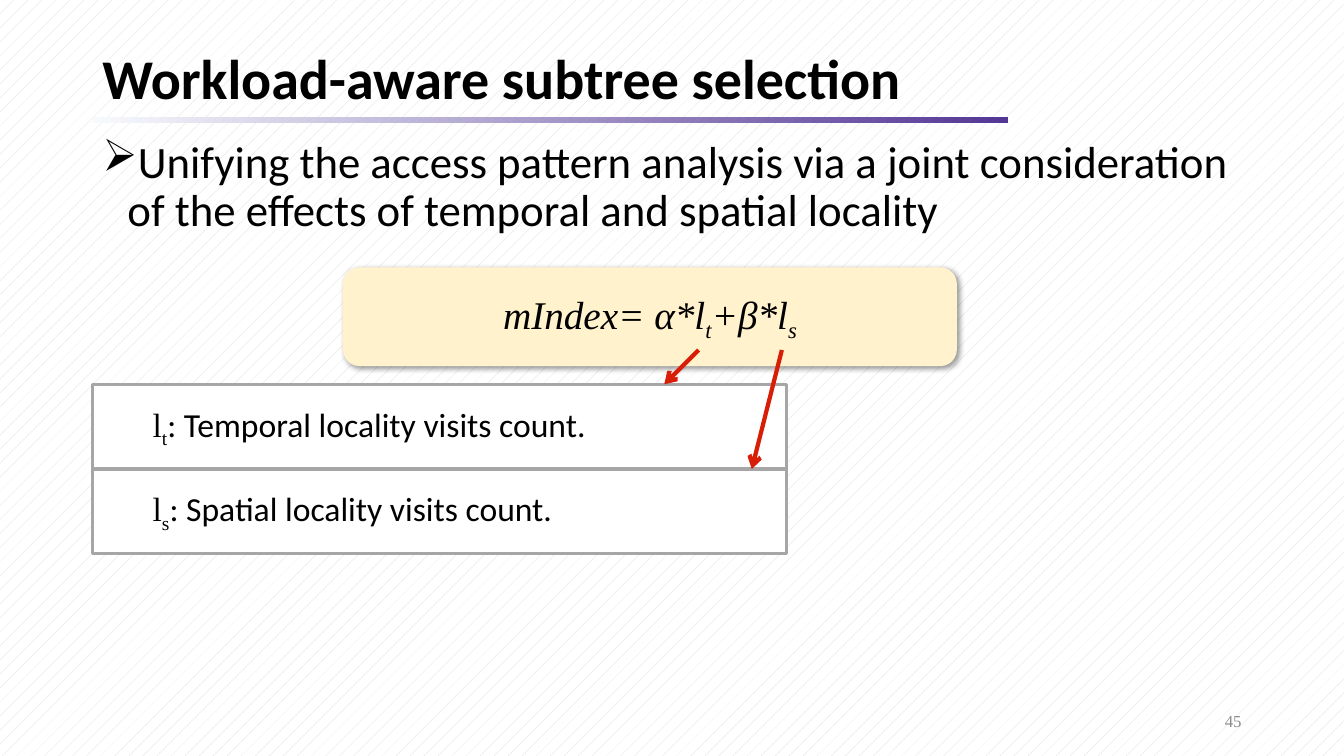
from lxml.etree import SubElement as Sub
from pptx import Presentation
from pptx.dml.color import RGBColor
from pptx.enum.dml import MSO_PATTERN as Pat
from pptx.enum.shapes import MSO_CONNECTOR as Conn, MSO_SHAPE as Geo
from pptx.enum.text import MSO_ANCHOR as Anc, PP_ALIGN as Al
from pptx.oxml.ns import qn
from pptx.util import Pt

SANS, SERIF = "Calibri", "Times New Roman"


def tint(code):
    """Return the colour for a hex string."""
    return RGBColor.from_string(code)


def apply(obj, vals):
    """Set each value of a dict on an object."""
    for key, val in vals.items():
        setattr(obj, key, val)


def write(shape, runs, font, para=None, anchor=Anc.MIDDLE, color="000000", bullet=None):
    """Fill a shape with one paragraph of (text, changes, baseline) runs."""
    apply(shape.text_frame, {"word_wrap": True, "vertical_anchor": anchor})
    line = shape.text_frame.paragraphs[0]
    props = line._p.get_or_add_pPr()
    if bullet:
        Sub(props, qn("a:buChar"), char=bullet)
    apply(line, {"alignment": Al.LEFT, **(para or {})})
    for text, changes, base in runs:
        run = line.add_run()
        run.text = text
        apply(run.font, {**font, **changes})
        run.font.color.rgb = tint(color)
        if base:
            run._r.get_or_add_rPr().set("baseline", str(base * 1000))
    return props


def label(slide, area, runs, font, **opts):
    """Add a text box and return its paragraph properties."""
    return write(slide.shapes.add_textbox(*map(Pt, area)), runs, font, **opts)


def block(slide, geo, area, fill, edge=None):
    """Add a flat shape with an optional outline."""
    shape = slide.shapes.add_shape(geo, *map(Pt, area))
    shape.shadow.inherit = False
    shape.fill.solid()
    shape.fill.fore_color.rgb = tint(fill)
    if edge:
        shape.line.color.rgb = tint(edge)
        shape.line.width = Pt(2.25)
    else:
        shape.line.fill.background()
    return shape


def fade(shape, codes):
    """Give a shape a left-to-right gradient."""
    shape.fill.gradient()
    shape.fill.gradient_angle = 0
    for stop, code, pos in zip(shape.fill.gradient_stops, codes, (0, 1)):
        stop.color.rgb = tint(code)
        stop.position = pos


def shade(shape):
    """Add a soft shadow to the lower right."""
    effects = shape._element.spPr.find(qn("a:effectLst"))
    outer = Sub(effects, qn("a:outerShdw"), blurRad=str(Pt(4)), dist=str(Pt(2)),
                dir="2700000", algn="tl", rotWithShape="0")
    color = Sub(outer, qn("a:srgbClr"), val="000000")
    Sub(color, qn("a:alpha"), val="40000")


def arrow(slide, ends):
    """Draw a red arrow between two points."""
    link = slide.shapes.add_connector(Conn.STRAIGHT, *map(Pt, ends))
    link.line.color.rgb = tint("D81E06")
    link.line.width = Pt(3)
    Sub(link.line._get_or_add_ln(), qn("a:tailEnd"), type="arrow")
    Sub(link._element.spPr, qn("a:effectLst"))


def main():
    """Build and save the slide."""
    deck = Presentation()
    apply(deck, {"slide_width": Pt(960), "slide_height": Pt(540)})
    slide = deck.slides.add_slide(deck.slide_layouts[6])
    back = slide.background.fill
    back.patterned()
    back.pattern = Pat.PERCENT_5
    back.fore_color.rgb = tint("D9D9D9")
    back.back_color.rgb = tint("FFFFFF")

    rule = block(slide, Geo.RECTANGLE, (66, 83.5, 654, 4.3), "FFFFFF")
    fade(rule, ("F7FAFD", "543795"))
    label(slide, (678, 500.5, 216, 28.8), [("45", {}, 0)],
          {"name": SERIF, "size": Pt(12)}, para={"alignment": Al.RIGHT}, color="8C8C8C")
    label(slide, (66, 31, 828, 54), [("Workload-aware subtree selection", {}, 0)],
          {"name": SANS, "size": Pt(40), "bold": True}, para={"line_spacing": 0.9})
    claim = ("Unifying the access pattern analysis via a joint consideration "
             "of the effects of temporal and spatial locality")
    props = label(slide, (66, 96, 828, 391), [(claim, {}, 0)],
                  {"name": SANS, "size": Pt(32)}, para={"line_spacing": 0.9},
                  anchor=Anc.TOP, bullet="➢")
    props.set("marL", str(Pt(18)))
    props.set("indent", str(Pt(-18)))

    index = block(slide, Geo.ROUNDED_RECTANGLE, (245, 191, 438.5, 70.5), "FFF2CC")
    shade(index)
    write(index, [("mIndex= α*l", {}, 0), ("t", {}, -25), ("+β*l", {}, 0), ("s", {}, -25)],
          {"name": SERIF, "size": Pt(28), "italic": True}, para={"alignment": Al.CENTER})

    for row, (sub, kind) in enumerate((("t", "Temporal"), ("s", "Spatial"))):
        area = (66, 274.5 + 60.5 * row, 496, 60.5)
        term = block(slide, Geo.RECTANGLE, area, "FFFFFF", "A6A6A6")
        note = f": {kind} locality visits count."
        props = write(term, [("l", {}, 0), (sub, {}, -25), (note, {"name": SANS}, 0)],
                      {"name": SERIF, "size": Pt(24)}, para={"level": 1})
        props.set("marL", str(Pt(36)))
        props.set("indent", "0")

    for ends in ((499, 250, 474.5, 274.5), (558.5, 250, 537, 335)):
        arrow(slide, ends)
    deck.save("out.pptx")


if __name__ == "__main__":
    main()
